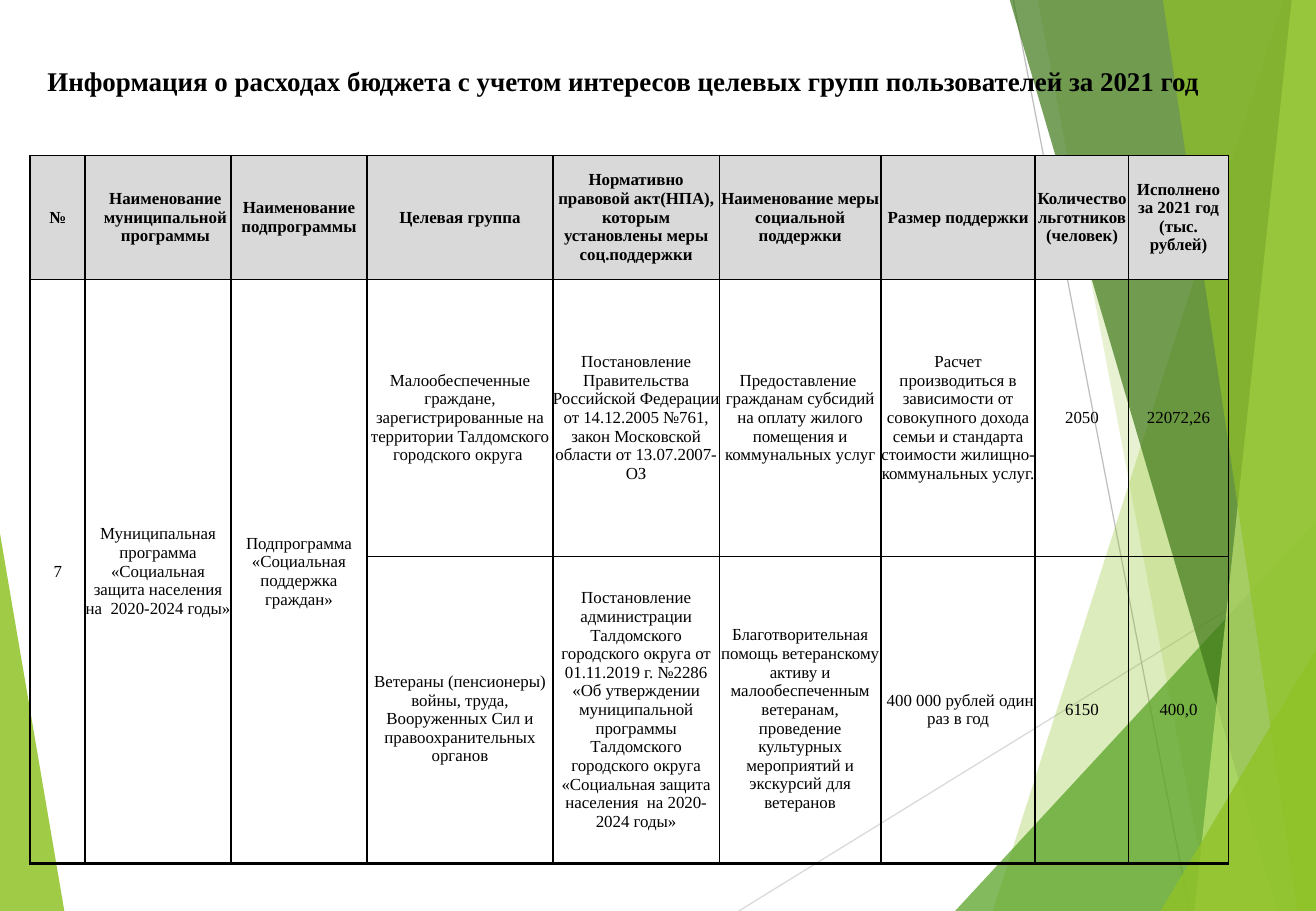
"""Build the slide on budget spending by target groups for 2021."""
from lxml import etree
from pptx import Presentation
from pptx.dml.color import RGBColor
from pptx.enum.shapes import MSO_CONNECTOR
from pptx.enum.text import MSO_ANCHOR, PP_ALIGN
from pptx.oxml.ns import qn
from pptx.util import Inches, Pt

STRAIGHT = MSO_CONNECTOR.STRAIGHT
MIDDLE = MSO_ANCHOR.MIDDLE
CENTER = PP_ALIGN.CENTER

W, H = 10.83, 7.5
COLORS = {
    "black": "000000", "header": "D9D9D9", "light": "D9D9D9", "gray": "BFBFBF",
    "lime": "90C226", "green": "54A021", "dark": "3F7819", "pale": "C0E474",
}
NO_MARGIN = {"margin_left": 0, "margin_top": 0, "margin_right": 0, "margin_bottom": 0,
             "vertical_anchor": MIDDLE, "word_wrap": True}


def write(tf, text, size, bold):
    for name, value in NO_MARGIN.items():
        setattr(tf, name, value)
    p = tf.paragraphs[0]
    p.alignment = CENTER
    r = p.add_run()
    r.text = text
    font = {"name": "Times New Roman", "size": Pt(size), "bold": bold}
    for name, value in font.items():
        setattr(r.font, name, value)
    r.font.color.rgb = RGBColor.from_string(COLORS["black"])
    return p


def add_border(cell, side, position, width):
    tcPr = cell._tc.get_or_add_tcPr()
    ln = etree.Element(qn(f"a:ln{side}"), w=str(Pt(width)))
    fill = etree.SubElement(ln, qn("a:solidFill"))
    etree.SubElement(fill, qn("a:srgbClr"), val=COLORS["black"])
    tcPr.insert(position, ln)


prs = Presentation()
prs.slide_width, prs.slide_height = Inches(W), Inches(H)
s = prs.slides.add_slide(prs.slide_layouts[6])

rays = [
    ((6.08, H), (W, 4.57), "light"),
    ((8.34, 0), (9.79, H), "gray"),
]
facets = [
    ([(0, 4.39), (0.53, H), (0, H)], "lime", 85),
    ([(10.56, 0), (8.17, H), (W, H), (W, 0)], "lime", 30),
    ([(8.54, 0), (9.96, H), (W, H), (W, 0)], "lime", 20),
    ([(7.86, H), (W, 4.29), (W, H)], "green", 72),
    ([(8.31, 0), (10.51, H), (W, H), (W, 0)], "dark", 70),
    ([(10.63, 0), (9.83, H), (W, H), (W, 0)], "pale", 70),
    ([(9.57, 0), (10.68, H), (W, H), (W, 0)], "lime", 65),
    ([(9.55, H), (W, 5.35), (W, H)], "lime", 80),
]
for start, end, color in rays:
    ray = s.shapes.add_connector(STRAIGHT, *[Inches(v) for v in start + end])
    ray.line.color.rgb = RGBColor.from_string(COLORS[color])
    ray.line.width = Pt(0.75)
    etree.SubElement(ray._element.spPr, qn("a:effectLst"))
for points, color, opacity in facets:
    corners = [(Inches(x), Inches(y)) for x, y in points]
    builder = s.shapes.build_freeform(*corners[0])
    builder.add_line_segments(corners[1:], close=True)
    sp = builder.convert_to_shape()
    sp.shadow.inherit = False
    sp.line.fill.background()
    sp.fill.solid()
    sp.fill.fore_color.rgb = RGBColor.from_string(COLORS[color])
    clr = sp._element.spPr.find(qn("a:solidFill"))[0]
    etree.SubElement(clr, qn("a:alpha"), val=str(opacity * 1000))

title = s.shapes.add_textbox(Inches(0.23), Inches(0.3), Inches(9.8), Inches(0.73))
p = write(title.text_frame,
          "Информация о расходах бюджета с учетом интересов целевых групп пользователей за 2021 год",
          16, True)
p.space_after = Pt(6.3)

col_widths = [0.45, 1.2, 1.12, 1.53, 1.37, 1.33, 1.27, 0.77, 0.82]
row_heights = [1.02, 2.28, 2.53]
rows = [
    ["№", "Наименование муниципальной программы", "Наименование подпрограммы", "Целевая группа",
     "Нормативно правовой акт(НПА), которым установлены меры соц.поддержки",
     "Наименование меры социальной поддержки", "Размер поддержки",
     "Количество льготников (человек)", "Исполнено за 2021 год (тыс. рублей)"],
    ["7", "Муниципальная программа «Социальная защита населения на  2020-2024 годы»",
     "Подпрограмма «Социальная поддержка граждан»",
     "Малообеспеченные граждане, зарегистрированные на территории Талдомского городского округа ",
     "Постановление Правительства Российской Федерации от 14.12.2005 №761, "
     "закон Московской области от 13.07.2007-ОЗ",
     "Предоставление  гражданам субсидий на оплату жилого помещения и коммунальных услуг",
     "Расчет производиться в зависимости от совокупного дохода семьи и стандарта стоимости "
     "жилищно-коммунальных услуг.",
     "2050", "22072,26"],
    [None, None, None,
     "Ветераны (пенсионеры) войны, труда, Вооруженных Сил и правоохранительных органов",
     "Постановление администрации Талдомского городского округа от 01.11.2019 г. №2286 "
     "«Об утверждении муниципальной программы Талдомского городского округа "
     "«Социальная защита населения  на 2020-2024 годы»",
     "Благотворительная помощь ветеранскому активу и малообеспеченным ветеранам, "
     "проведение культурных мероприятий и экскурсий для ветеранов",
     " 400 000 рублей один раз в год", "6150", "400,0"],
]
frame = s.shapes.add_table(len(rows), len(col_widths), Inches(0.25), Inches(1.28),
                           Inches(sum(col_widths)), Inches(sum(row_heights)))
table = frame.table
table.first_row = table.horz_banding = False
for column, width in zip(table.columns, col_widths):
    column.width = Inches(width)
for row, height in zip(table.rows, row_heights):
    row.height = Inches(height)
for c in range(3):
    table.cell(1, c).merge(table.cell(2, c))

column_lines = [1.5] * 5 + [1] * 5
row_lines = [1, 1, 1, 1.5]
for i, texts in enumerate(rows):
    for j, text in enumerate(texts):
        cell = table.cell(i, j)
        if i == 0:
            cell.fill.solid()
            cell.fill.fore_color.rgb = RGBColor.from_string(COLORS["header"])
        else:
            cell.fill.background()
        bottom = 3 if cell.is_merge_origin else i + 1
        borders = [("L", column_lines[j]), ("R", column_lines[j + 1]),
                   ("T", row_lines[i]), ("B", row_lines[bottom])]
        if cell.is_spanned:
            borders.pop(2)
        for position, (side, width) in enumerate(borders):
            add_border(cell, side, position, width)
        if text:
            write(cell.text_frame, text, 10, i == 0)
        for name, value in NO_MARGIN.items():
            if name != "word_wrap":
                setattr(cell, name, value)

table.cell(0, 1).margin_left = Inches(0.12)
for c in (3, 5):
    table.cell(2, c).margin_top = Inches(0.15)

prs.save("out.pptx")
